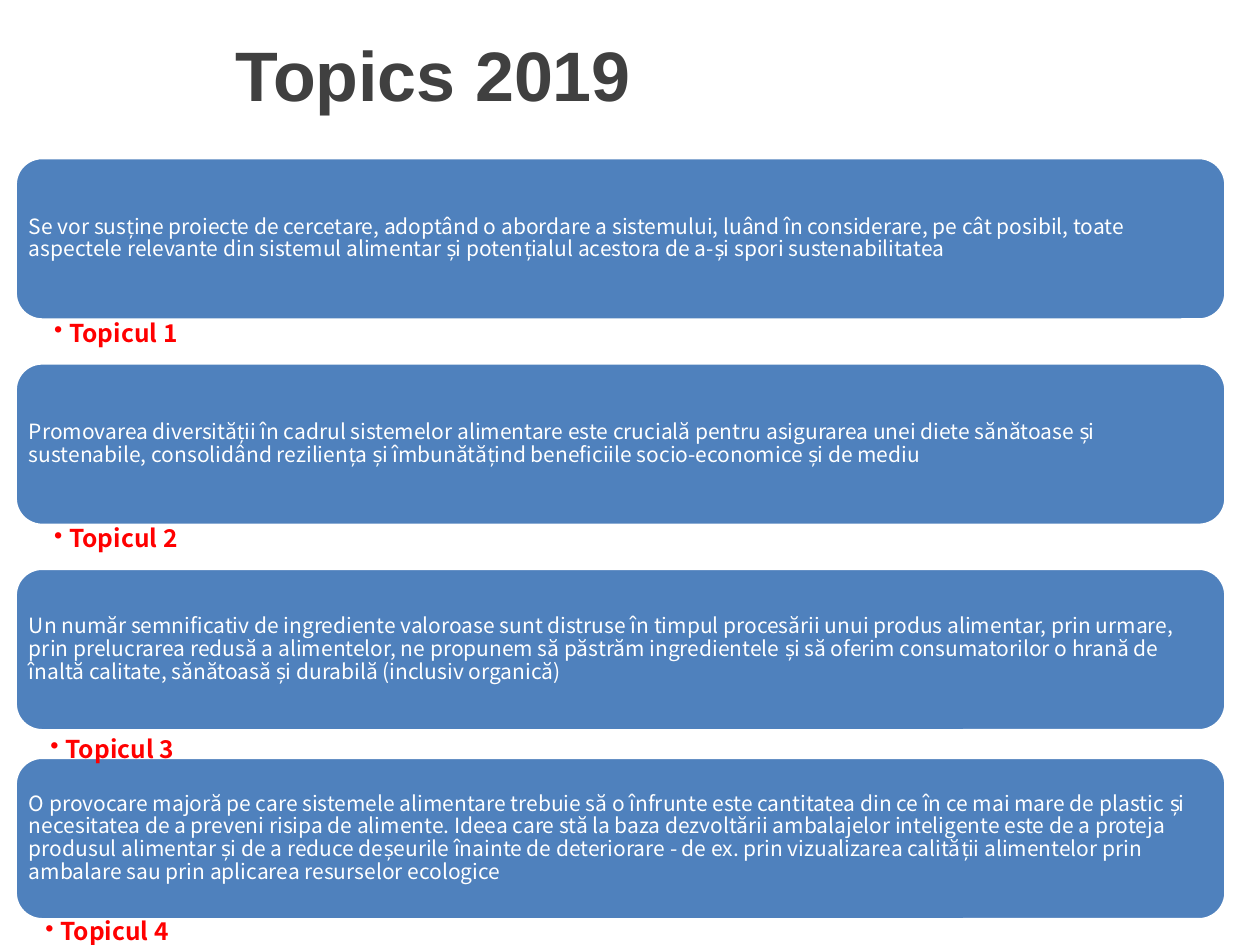
import dataclasses
import pptx
import pptx.util
import pptx.dml.color
import pptx.enum.shapes
import pptx.enum.text
import lxml.etree

Inches = pptx.util.Inches
Pt = pptx.util.Pt
Anchor = pptx.enum.text.MSO_ANCHOR

HUES = {"blue": "4F81BD", "white": "FFFFFF", "red": "FF0000", "gray": "404040"}
FACE = "Noto Sans CJK KR"
LEFT, WIDE, TALL = 0.12, 9.61, 1.29
INSET = 0.06


@dataclasses.dataclass
class Topic:
    top: float
    text: str
    label: str
    left: float
    low: float


TOPICS = [
    Topic(1.25, "Se vor susține proiecte de cercetare, adoptând o abordare a sistemului, luând în considerare, pe cât posibil, toate aspectele relevante din sistemul alimentar și potențialul acestora de a-și spori sustenabilitatea",
          "Topicul 1", 0.12, 2.53),
    Topic(2.88, "Promovarea diversității în cadrul sistemelor alimentare este crucială pentru asigurarea unei diete sănătoase și sustenabile, consolidând reziliența și îmbunătățind beneficiile socio-economice și de mediu",
          "Topicul 2", 0.12, 4.16),
    Topic(4.51, "Un număr semnificativ de ingrediente valoroase sunt distruse în timpul procesării unui produs alimentar, prin urmare, prin prelucrarea redusă a alimentelor, ne propunem să păstrăm ingredientele și să oferim consumatorilor o hrană de înaltă calitate, sănătoasă și durabilă (inclusiv organică)",
          "Topicul 3", 0.09, 5.83),
    Topic(6.01, "O provocare majoră pe care sistemele alimentare trebuie să o înfrunte este cantitatea din ce în ce mai mare de plastic și necesitatea de a preveni risipa de alimente. Ideea care stă la baza dezvoltării ambalajelor inteligente este de a proteja produsul alimentar și de a reduce deșeurile înainte de deteriorare - de ex. prin vizualizarea calității alimentelor prin ambalare sau prin aplicarea resurselor ecologice",
          "Topicul 4", 0.05, 7.28),
]


def tint(name: str):
    return pptx.dml.color.RGBColor.from_string(HUES[name])


def write(frame, text: str, size=12, face=FACE, hue="white", bold=False,
          anchor=Anchor.MIDDLE, pads=None, pitch=None, bullet=False) -> None:
    frame.word_wrap = True
    frame.vertical_anchor = anchor
    if pads:
        (frame.margin_left, frame.margin_top,
         frame.margin_right, frame.margin_bottom) = map(Inches, pads)
    para = frame.paragraphs[0]
    if pitch:
        para.line_spacing = pitch
    if bullet:
        para.level = 1
        props = para._p.get_or_add_pPr()
        props.set("marL", str(Inches(0.12)))
        props.set("indent", str(Inches(-0.12)))
        mark = lxml.etree.SubElement(props, pptx.oxml.ns.qn("a:buChar"))
        mark.set("char", "•")
    run = para.add_run()
    run.text = text
    font = run.font
    font.size, font.name, font.bold = Pt(size), face, bold
    font.color.rgb = tint(hue)


def draw_box(slide, topic: Topic) -> None:
    box = slide.shapes.add_shape(
        pptx.enum.shapes.MSO_SHAPE.ROUNDED_RECTANGLE,
        Inches(LEFT), Inches(topic.top), Inches(WIDE), Inches(TALL))
    box.shadow.inherit = False
    box.fill.solid()
    box.fill.fore_color.rgb = tint("blue")
    box.line.color.rgb = tint("white")
    box.line.width = Pt(2)
    body = slide.shapes.add_textbox(
        Inches(LEFT + INSET), Inches(topic.top + INSET),
        Inches(WIDE - 2 * INSET), Inches(TALL - 2 * INSET))
    write(body.text_frame, topic.text, pads=[0.05] * 4, pitch=0.9)


def draw_label(slide, topic: Topic) -> None:
    label = slide.shapes.add_textbox(
        Inches(topic.left), Inches(topic.low), Inches(WIDE), Inches(0.33))
    write(label.text_frame, topic.label, size=14, hue="red", bold=True,
          anchor=Anchor.TOP, pads=(0.31, 0.02, 0.11, 0.02), pitch=0.9, bullet=True)


def main() -> None:
    deck = pptx.Presentation()
    deck.slide_width, deck.slide_height = Inches(10), Inches(7.5)
    slide = deck.slides.add_slide(deck.slide_layouts[5])
    title = slide.shapes.title
    title.left, title.top = Inches(1.77), Inches(0)
    title.width, title.height = Inches(8.23), Inches(1.17)
    write(title.text_frame, "Topics 2019", size=40, face="Arial", hue="gray", bold=True)
    title.text_frame.paragraphs[0].alignment = pptx.enum.text.PP_ALIGN.LEFT
    for topic in TOPICS:
        draw_box(slide, topic)
    for topic in TOPICS:
        draw_label(slide, topic)
    deck.save("out.pptx")


if __name__ == "__main__":
    main()
